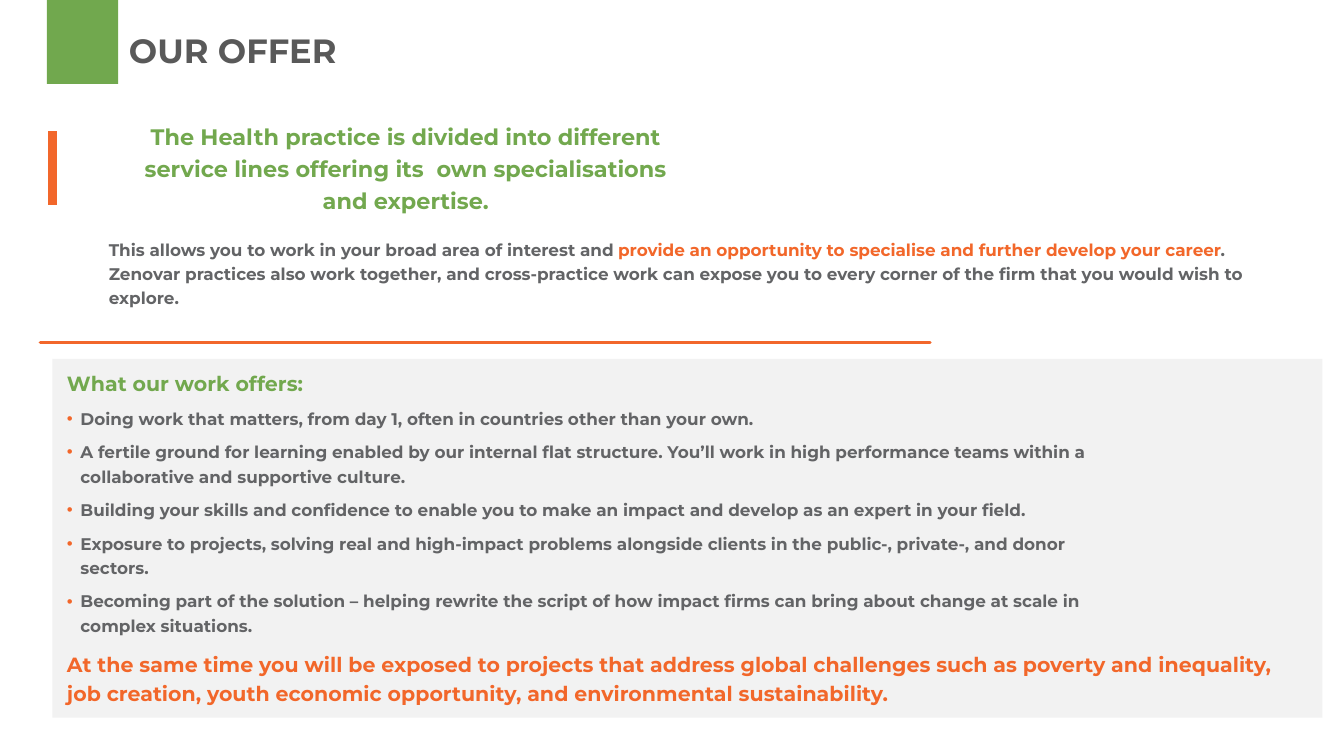
"""Build the "Our offer" slide on a grid of 100 columns, with rows of the same size."""
from lxml import etree
from pptx import Presentation, util as u
from pptx.dml.color import RGBColor
from pptx.enum import shapes, text
from pptx.oxml.ns import qn

GREEN, ORANGE, GREY = "72A84E", "F2672A", "636466"

deck = Presentation()
deck.slide_width = u.Inches(10)
deck.slide_height = deck.slide_width * 9 // 16
slide = deck.slides.add_slide(deck.slide_layouts[6])
unit = deck.slide_width / 100


def paint(item, color):
    item.rgb = RGBColor.from_string(color)


def write(para, runs, size, lead=1.2, gap=0, bullet=False):
    para.line_spacing, para.space_before = lead, u.Pt(gap)
    props = para._p.get_or_add_pPr()
    props.set("marL", str(u.Inches(0.11 if bullet else 0.01)))
    props.set("marR", str(u.Inches(1.5 if bullet else 0)))
    props.set("indent", str(u.Inches(-0.1 if bullet else 0)))
    if bullet:
        tint = etree.SubElement(props, qn("a:buClr"))
        etree.SubElement(tint, qn("a:srgbClr"), val=ORANGE)
        etree.SubElement(props, qn("a:buFont"), typeface="Arial")
        etree.SubElement(props, qn("a:buChar"), char="•")
    font = para.font
    font.name, font.size, font.bold = "Montserrat", u.Pt(size), True
    paint(font.color, runs[0][1])
    for words, color in runs:
        run = para.add_run()
        run.text = words
        if color != runs[0][1]:
            paint(run.font.color, color)


rect = shapes.MSO_SHAPE.RECTANGLE
blocks = []
for area, fill in [((3.5, 0, 5.3, 6.25), "71A84E"), ((3.9, 26.7, 94.5, 26.7), "F2F2F2")]:
    block = slide.shapes.add_shape(rect, *[round(n * unit) for n in area])
    block.shadow.inherit = False
    block.fill.solid()
    paint(block.fill.fore_color, fill)
    block.line.fill.background()
    blocks.append(block)

rules = [((3.9, 14.9, 3.9, 10.1), 5, "sq"), ((3, 25.5, 69.2, 25.5), 1.75, "rnd")]
for ends, width, cap in rules:
    rule = slide.shapes.add_connector(
        shapes.MSO_CONNECTOR.STRAIGHT, *[round(n * unit) for n in ends])
    paint(rule.line.color, "F2672B")
    rule.line.width = u.Pt(width)
    rule._element.spPr.find(qn("a:ln")).set("cap", cap)
    etree.SubElement(rule._element.spPr, qn("a:effectLst"))

top, middle = text.MSO_ANCHOR.TOP, text.MSO_ANCHOR.MIDDLE
left, center = text.PP_ALIGN.LEFT, text.PP_ALIGN.CENTER
boxes = [
    ((9.5, 1.5, 62, 3.8), (0, 0.07, 0, 0), top, left, 18, 1,
     [("OUR OFFER", "595959")]),
    ((7.3, 10, 44.2, 4.6), (0.15, 0.01, 0, 0), middle, center, 12, 1.2,
     [("The Health practice is divided into different service lines offering its  own "
       "specialisations and expertise.", GREEN)]),
    ((7.3, 17.1, 89.2, 4.1), (0.07, 0.04, 0.07, 0.04), top, left, 9, 1.2,
     [("This allows you to work in your broad area of interest and ", GREY),
      ("provide an opportunity to specialise and further develop your career", ORANGE),
      (". Zenovar practices also work together, and cross-practice work can expose you "
       "to every corner of the firm that you would wish to explore.", GREY)]),
]
for area, inset, anchor, align, size, lead, runs in boxes:
    frame = slide.shapes.add_textbox(*[round(n * unit) for n in area]).text_frame
    frame.word_wrap = True
    frame.auto_size = text.MSO_AUTO_SIZE.SHAPE_TO_FIT_TEXT
    frame.vertical_anchor = anchor
    (frame.margin_left, frame.margin_top,
     frame.margin_right, frame.margin_bottom) = [u.Inches(n) for n in inset]
    frame.paragraphs[0].alignment = align
    write(frame.paragraphs[0], runs, size, lead)

offers = [
    "Doing work that matters, from day 1, often in countries other than your own.",
    "A fertile ground for learning enabled by our internal flat structure. You’ll work in "
    "high performance teams within a collaborative and supportive culture.",
    "Building your skills and confidence to enable you to make an impact and develop as an "
    "expert in your field.",
    "Exposure to projects, solving real and high-impact problems alongside clients in the "
    "public-, private-, and donor sectors.",
    "Becoming part of the solution – helping rewrite the script of how impact firms can "
    "bring about change at scale in complex situations.",
]
close = ("At the same time you will be exposed to projects that address global challenges "
         "such as poverty and inequality, job creation, youth economic opportunity, and "
         "environmental sustainability.")
panel = blocks[1].text_frame
panel.word_wrap = True
panel.vertical_anchor = middle
write(panel.paragraphs[0], [("What our work offers:", GREEN)], 11, 1)
for offer in offers:
    write(panel.add_paragraph(), [(offer, GREY)], 9, gap=5, bullet=True)
write(panel.add_paragraph(), [(close, ORANGE)], 11, gap=6)
for para in panel.paragraphs:
    para.alignment = left

deck.save("out.pptx")
